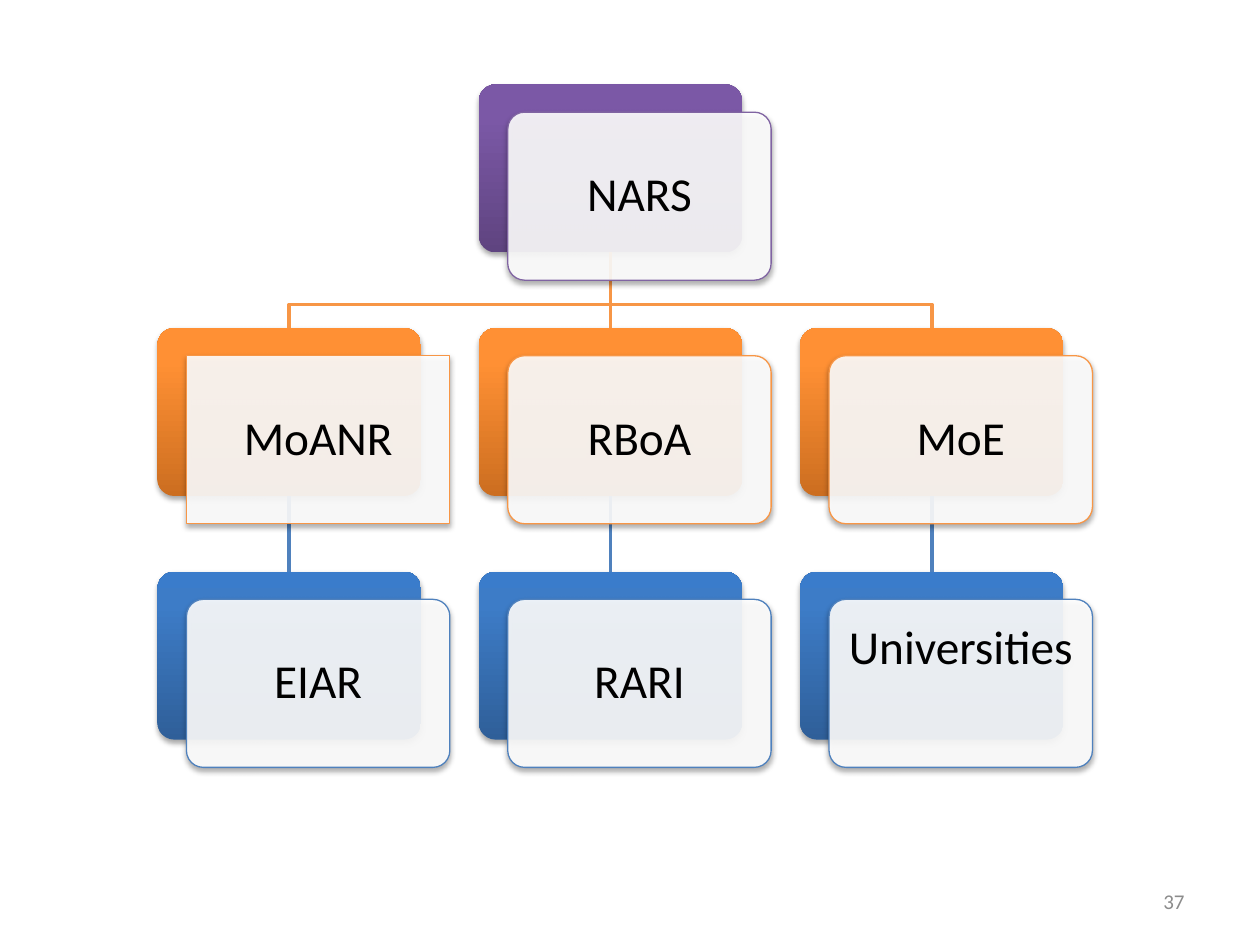
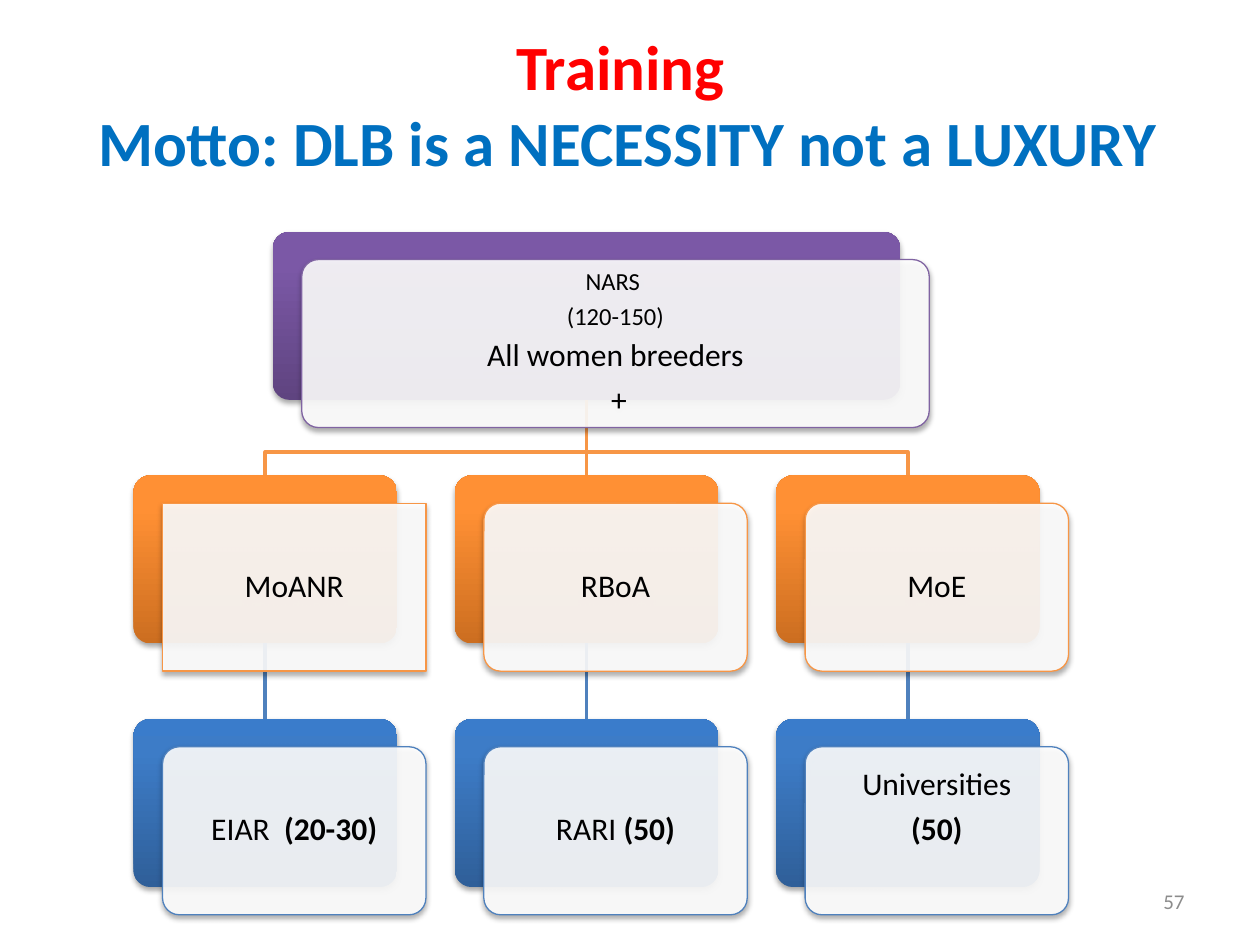
from copy import deepcopy
from dataclasses import dataclass
from typing import NamedTuple

from lxml import etree
from pptx import Presentation
from pptx.dml.color import RGBColor
from pptx.enum.shapes import MSO_CONNECTOR, MSO_SHAPE
from pptx.enum.text import MSO_ANCHOR, PP_ALIGN
from pptx.oxml.ns import qn
from pptx.util import Inches, Pt

STRAIGHT = MSO_CONNECTOR.STRAIGHT
RECT, ROUNDED = MSO_SHAPE.RECTANGLE, MSO_SHAPE.ROUNDED_RECTANGLE
TOP, MIDDLE = MSO_ANCHOR.TOP, MSO_ANCHOR.MIDDLE
CENTER, RIGHT = PP_ALIGN.CENTER, PP_ALIGN.RIGHT
SITE_TOP, SITE_BOTTOM = 0, 2


class Tone(NamedTuple):
    line: str
    gradient: tuple  # dark foot, mid, light head


@dataclass(frozen=True)
class Theme:
    font: str = "Calibri"
    text: str = "000000"
    paper: str = "FFFFFF"
    muted: str = "8C8C8C"
    red: str = "FF0000"
    blue: str = "0070C0"
    # One tone for each level of the hierarchy
    tones: tuple = (
        Tone("8064A2", ("5F4480", "7B58A6", "7C57A8")),
        Tone("F79646", ("CC6E20", "FF9034", "FF9136")),
        Tone("4F81BD", ("2F5F99", "3D7CC7", "3A7CCB")),
    )
    stops: tuple = (0, 0.8, 1)
    title: int = 36
    large: int = 27
    medium: int = 18
    small: int = 14
    number: int = 12
    link_width: float = 2
    panel_line: float = 0.75


THEME = Theme()


class Box(NamedTuple):
    left: float
    top: float
    width: float
    height: float

    def moved(self, dx, dy):
        return self._replace(left=self.left + dx, top=self.top + dy)

    @property
    def centre(self):
        return self.left + self.width / 2

    @property
    def bottom(self):
        return self.top + self.height

    def emu(self):
        return [Inches(length) for length in self]


SLIDE = Box(0, 0, 10, 7.5)
SHIFT_X, SHIFT_Y = 0.23, 0.22   # panel in front of its tile
GAP_X, GAP_Y = 0.46, 0.6        # between neighbouring tiles
BEND = 0.69                     # share of the drop where a branch turns


class Line(NamedTuple):
    text: str
    size: int
    bold_tail: str = ""
    color: str = THEME.text
    bold: bool = False


class Unit(NamedTuple):
    lines: list
    outline: int = ROUNDED
    raised: bool = False  # text sits one line higher than the middle


def rgb(value):
    return RGBColor.from_string(value)


def set_all(target, **values):
    for name, value in values.items():
        setattr(target, name, value)


def write_lines(frame, lines, align, **paragraph_format):
    """Fill a text frame, one paragraph for each line."""
    for i, line in enumerate(lines):
        paragraph = frame.paragraphs[0] if i == 0 else frame.add_paragraph()
        set_all(paragraph, alignment=align, **paragraph_format)
        if paragraph_format:
            paragraph.space_after = Pt(0.35 * line.size)
        for text, bold in ((line.text, line.bold), (line.bold_tail, True)):
            if text:
                run = paragraph.add_run()
                run.text = text
                set_all(run.font, name=THEME.font, size=Pt(line.size), bold=bold)
                run.font.color.rgb = rgb(line.color)


def add_text(slide, box, lines, align, anchor):
    frame = slide.shapes.add_textbox(*box.emu()).text_frame
    set_all(frame, word_wrap=True, vertical_anchor=anchor)
    write_lines(frame, lines, align)


def cast_shadow(shape):
    shape.shadow.inherit = False
    effects = shape._element.spPr.find(qn("a:effectLst"))
    shadow = etree.SubElement(effects, qn("a:outerShdw"), blurRad=str(Pt(3.1)),
                              dist=str(Pt(1.8)), dir="5400000", rotWithShape="0")
    black = etree.SubElement(shadow, qn("a:srgbClr"), val="000000")
    etree.SubElement(black, qn("a:alpha"), val="35000")


def add_tile(slide, box, tone):
    """Coloured rounded tile behind a panel."""
    tile = slide.shapes.add_shape(ROUNDED, *box.emu())
    tile.adjustments[0] = 0.1
    tile.fill.gradient()
    tile.fill.gradient_angle = 90
    stop_list = tile._element.spPr.find(".//" + qn("a:gsLst"))
    stop_list.append(deepcopy(stop_list[-1]))
    for stop, position, color in zip(tile.fill.gradient_stops, THEME.stops, tone.gradient):
        stop.position = position
        stop.color.rgb = rgb(color)
    tile.line.fill.background()
    cast_shadow(tile)
    return tile


def add_panel(slide, box, unit, tone):
    """Translucent white panel that carries the unit's text."""
    panel = slide.shapes.add_shape(unit.outline, *box.moved(SHIFT_X, SHIFT_Y).emu())
    if unit.outline == ROUNDED:
        panel.adjustments[0] = 0.1
    panel.fill.solid()
    panel.fill.fore_color.rgb = rgb(THEME.paper)
    white = panel._element.spPr.find(qn("a:solidFill"))[0]
    etree.SubElement(white, qn("a:alpha"), val="90000")
    panel.line.color.rgb = rgb(tone.line)
    panel.line.width = Pt(THEME.panel_line)
    cast_shadow(panel)

    size = unit.lines[0].size
    inset = Inches(0.004 * size)
    lift = Pt(1.45 * size) if unit.raised else 0
    frame = panel.text_frame
    set_all(frame, word_wrap=True, vertical_anchor=MIDDLE, margin_left=inset,
            margin_right=inset, margin_top=inset, margin_bottom=inset + lift)
    write_lines(frame, unit.lines, CENTER, line_spacing=0.9)


def style_link(link, tone):
    link.line.color.rgb = rgb(tone.line)
    link.line.width = Pt(THEME.link_width)


def add_drop(slide, upper, lower, tone):
    """Straight link from one tile's foot to the next tile's head."""
    drop = slide.shapes.add_connector(STRAIGHT, 0, 0, 0, 0)
    drop.begin_connect(upper, SITE_BOTTOM)
    drop.end_connect(lower, SITE_TOP)
    style_link(drop, tone)
    etree.SubElement(drop._element.spPr, qn("a:effectLst"))


def add_branch(slide, parent, child, tone):
    """Bent link from the parent's foot to a child at its side."""
    bend = parent.bottom + BEND * (child.top - parent.bottom)
    points = [(parent.centre, parent.bottom), (parent.centre, bend),
              (child.centre, bend), (child.centre, child.top)]
    start, *rest = [(Inches(x), Inches(y)) for x, y in points]
    builder = slide.shapes.build_freeform(*start)
    builder.add_line_segments(rest, close=False)
    branch = builder.convert_to_shape()
    branch.fill.background()
    branch.shadow.inherit = False
    style_link(branch, tone)


def add_hierarchy(slide, area, root, ministries, institutes, root_width=None):
    """Root above three columns of a ministry and its institute."""
    pitch_x = (area.width - SHIFT_X + GAP_X) / 3
    pitch_y = (area.height - SHIFT_Y + GAP_Y) / 3
    cell = Box(area.left, area.top, pitch_x - GAP_X, pitch_y - GAP_Y)
    width = root_width or cell.width
    root_box = Box(cell.moved(pitch_x, 0).centre - width / 2, area.top, width, cell.height)
    top_tone, mid_tone, low_tone = THEME.tones

    # Tiles
    root_tile = add_tile(slide, root_box, top_tone)
    mid_boxes, low_boxes = [[cell.moved(column * pitch_x, row * pitch_y)
                             for column in range(3)] for row in (1, 2)]
    mid_tiles = [add_tile(slide, box, mid_tone) for box in mid_boxes]
    low_tiles = [add_tile(slide, box, low_tone) for box in low_boxes]

    # Links
    for upper, lower in zip(mid_tiles, low_tiles):
        add_drop(slide, upper, lower, low_tone)
    for side in (0, 2):
        add_branch(slide, root_box, mid_boxes[side], mid_tone)
    add_drop(slide, root_tile, mid_tiles[1], mid_tone)

    # Panels
    add_panel(slide, root_box, root, top_tone)
    for boxes, units, tone in ((mid_boxes, ministries, mid_tone),
                               (low_boxes, institutes, low_tone)):
        for box, unit in zip(boxes, units):
            add_panel(slide, box, unit, tone)


def add_number(slide, number):
    add_text(slide, Box(7.17, 6.95, 2.33, 0.4),
             [Line(number, THEME.number, color=THEME.muted)], RIGHT, MIDDLE)


def ministry_units(size):
    return [Unit([Line("MoANR", size)], RECT), Unit([Line("RBoA", size)]),
            Unit([Line("MoE", size)])]


def build_structure(slide):
    size = THEME.large
    institutes = [Unit([Line("EIAR", size)]), Unit([Line("RARI", size)]),
                  Unit([Line("Universities", size)], raised=True)]
    add_hierarchy(slide, Box(1.25, 0.67, 7.42, 5.42), Unit([Line("NARS", size)]),
                  ministry_units(size), institutes)
    add_number(slide, "37")


def build_training(slide):
    size = THEME.medium
    root = Unit([Line("NARS ", THEME.small), Line("(120-150)", THEME.small),
                 Line("All women breeders", size), Line(" +", size)])
    institutes = [Unit([Line("EIAR  ", size, "(20-30)")]),
                  Unit([Line("RARI ", size, "(50)")]),
                  Unit([Line("Universities", size), Line("", size, "(50)")], raised=True)]
    add_hierarchy(slide, Box(1.06, 1.84, 7.42, 5.42), root,
                  ministry_units(size), institutes, root_width=4.98)
    add_number(slide, "57")
    add_text(slide, Box(0.48, 0.17, 9, 1.45),
             [Line("Training ", THEME.title, color=THEME.red, bold=True),
              Line("Motto: DLB is a NECESSITY not a LUXURY", THEME.title,
                   color=THEME.blue, bold=True)], CENTER, TOP)


def main():
    deck = Presentation()
    set_all(deck, slide_width=Inches(SLIDE.width), slide_height=Inches(SLIDE.height))
    blank = deck.slide_layouts[6]
    for build in (build_structure, build_training):
        build(deck.slides.add_slide(blank))
    deck.save("out.pptx")


if __name__ == "__main__":
    main()
